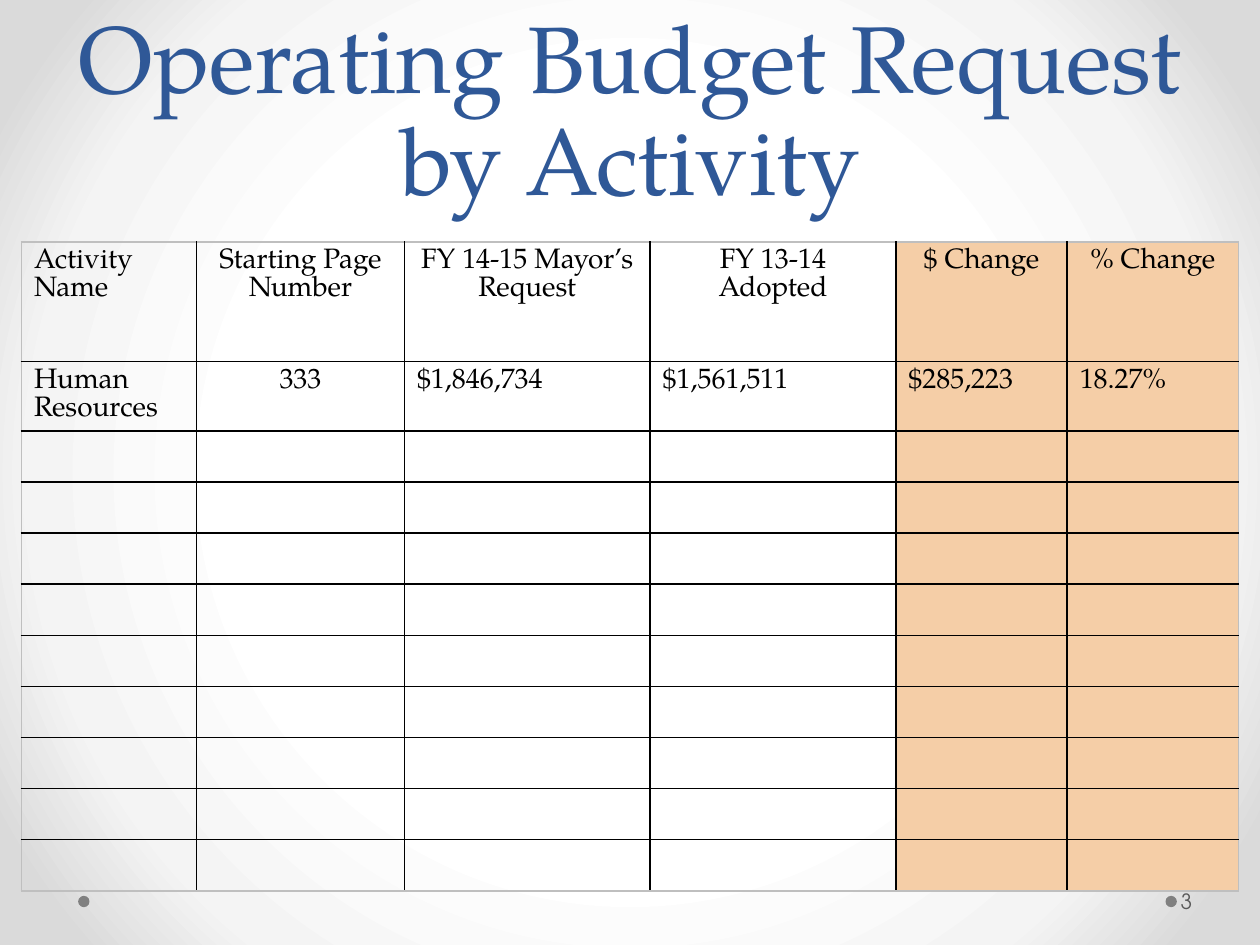
from dataclasses import dataclass

from lxml.etree import SubElement
from pptx import Presentation
from pptx.dml.color import RGBColor
from pptx.enum.shapes import MSO_SHAPE as Shape
from pptx.enum.text import MSO_ANCHOR as Anchor, MSO_AUTO_SIZE as AutoSize, PP_ALIGN as Align
from pptx.oxml import parse_xml
from pptx.oxml.ns import nsdecls, qn
from pptx.util import Inches, Pt


@dataclass(frozen=True)
class Theme:
    serif: str = "TeX Gyre Pagella"
    sans: str = "TeX Gyre Adventor"
    title: str = "2F5897"
    text: str = "000000"
    number: str = "595959"
    dot: str = "808080"
    change: str = "F5CEA7"
    grid: str = "000000"
    frame: str = "BFBFBF"
    title_size: int = 54
    table_size: int = 16
    number_size: int = 12
    backdrop: tuple = ((50, "FFFFFF"), (76, "F4F4F4"), (92, "DADADA"))


@dataclass(frozen=True)
class Column:
    head: str
    value: str
    width: float
    head_align: Align = Align.CENTER
    value_align: Align = Align.LEFT
    fill: str | None = None


THEME = Theme()
COLUMNS = [
    Column("Activity Name", "Human Resources", 1.39, head_align=Align.LEFT),
    Column("Starting Page Number", "333", 1.65, value_align=Align.CENTER),
    Column("FY 14-15 Mayor’s Request", "$1,846,734", 1.95),
    Column("FY 13-14 Adopted", "$1,561,511", 1.95),
    Column("$ Change", "$285,223", 1.36, fill=THEME.change),
    Column("% Change", "18.27%", 1.36, fill=THEME.change),
]
EMPTY_ROWS = 9
ROW_HEIGHTS = [0.95, 0.55] + [3.65 / EMPTY_ROWS] * EMPTY_ROWS


def add_text(p, text: str, font: str, size: int, color: str) -> None:
    r = p.add_run()
    r.text = text
    for name, value in {"name": font, "size": Pt(size), "bold": False}.items():
        setattr(r.font, name, value)
    r.font.color.rgb = RGBColor.from_string(color)


def set_backdrop(slide) -> None:
    stops = "".join(
        f'<a:gs pos="{pos * 1000}"><a:srgbClr val="{color}"/></a:gs>'
        for pos, color in THEME.backdrop
    )
    bg = parse_xml(
        f'<p:bg {nsdecls("p", "a")}><p:bgPr><a:gradFill rotWithShape="1">'
        f'<a:gsLst>{stops}</a:gsLst><a:path path="circle">'
        '<a:fillToRect l="50000" t="50000" r="50000" b="50000"/></a:path>'
        "</a:gradFill><a:effectLst/></p:bgPr></p:bg>"
    )
    slide.element.cSld.insert(0, bg)


def add_dot(slide, left: float) -> None:
    sp = slide.shapes.add_shape(
        Shape.OVAL, Inches(left), Inches(7.11), Inches(0.09), Inches(0.09))
    sp.shadow.inherit = False
    sp.fill.solid()
    sp.fill.fore_color.rgb = RGBColor.from_string(THEME.dot)
    sp.line.fill.background()


def set_title(slide, text: str) -> None:
    sp = slide.shapes.title
    box = {"left": 0.5, "top": 0, "width": 9, "height": 1.75}
    for name, value in box.items():
        setattr(sp, name, Inches(value))
    tf = sp.text_frame
    tf.auto_size, tf.vertical_anchor = AutoSize.NONE, Anchor.BOTTOM
    p = tf.paragraphs[0]
    p.alignment, p.line_spacing = Align.CENTER, Pt(58)
    add_text(p, text, THEME.serif, THEME.title_size, THEME.title)


def set_borders(cell, row: int, col: int) -> None:
    """Draw the inner grid black and the outer frame grey."""
    outer = {
        "L": col == 0,
        "R": col == len(COLUMNS) - 1,
        "T": row == 0,
        "B": row == len(ROW_HEIGHTS) - 1,
    }
    tc_pr = cell._tc.get_or_add_tcPr()
    for i, (side, is_outer) in enumerate(outer.items()):
        ln = SubElement(tc_pr, qn(f"a:ln{side}"), w=str(Pt(1)))
        fill = SubElement(ln, qn("a:solidFill"))
        SubElement(fill, qn("a:srgbClr"), val=THEME.frame if is_outer else THEME.grid)
        tc_pr.insert(i, ln)


def fill_cell(cell, row: int, column: Column) -> None:
    if column.fill:
        cell.fill.solid()
        cell.fill.fore_color.rgb = RGBColor.from_string(column.fill)
    else:
        cell.fill.background()
    content = [(column.head, column.head_align), (column.value, column.value_align)]
    if row < len(content):
        text, align = content[row]
        p = cell.text_frame.paragraphs[0]
        p.alignment = align
        add_text(p, text, THEME.serif, THEME.table_size, THEME.text)


def add_budget_table(slide) -> None:
    table = slide.shapes.add_table(
        len(ROW_HEIGHTS), len(COLUMNS), Inches(0.17), Inches(1.92),
        Inches(sum(c.width for c in COLUMNS)), Inches(sum(ROW_HEIGHTS))).table
    table.first_row = table.horz_banding = False
    for i, height in enumerate(ROW_HEIGHTS):
        table.rows[i].height = Inches(height)
    for j, column in enumerate(COLUMNS):
        table.columns[j].width = Inches(column.width)
        for i in range(len(ROW_HEIGHTS)):
            fill_cell(table.cell(i, j), i, column)
            set_borders(table.cell(i, j), i, j)


def add_page_number(slide, number: str) -> None:
    tf = slide.shapes.add_textbox(
        Inches(9.34), Inches(6.95), Inches(0.61), Inches(0.4)).text_frame
    layout = {
        "word_wrap": True,
        "vertical_anchor": Anchor.MIDDLE,
        "margin_left": Inches(0.03),
        "margin_right": Inches(0.05),
    }
    for name, value in layout.items():
        setattr(tf, name, value)
    add_text(tf.paragraphs[0], number, THEME.sans, THEME.number_size, THEME.number)


def main() -> None:
    prs = Presentation()
    prs.slide_width, prs.slide_height = Inches(10), Inches(7.5)
    slide = prs.slides.add_slide(prs.slide_layouts.get_by_name("Title Only"))
    set_backdrop(slide)
    for left in (9.25, 0.62):
        add_dot(slide, left)
    set_title(slide, "Operating Budget Request by Activity")
    add_budget_table(slide)
    add_page_number(slide, "3")
    prs.save("out.pptx")


if __name__ == "__main__":
    main()
